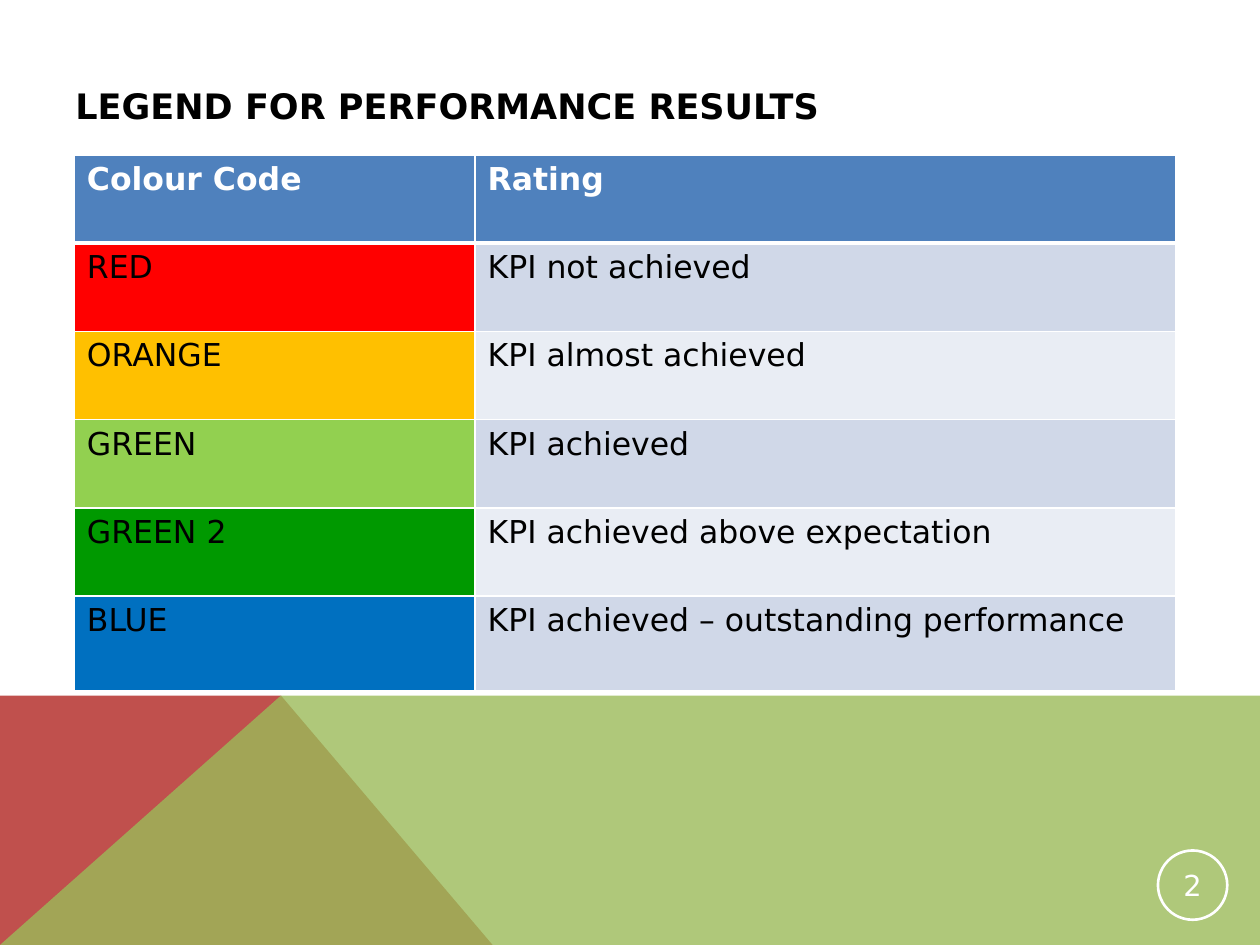
from dataclasses import dataclass

from lxml import etree
from pptx import Presentation
from pptx.dml.color import RGBColor
from pptx.enum.shapes import MSO_SHAPE
from pptx.enum.text import MSO_ANCHOR, PP_ALIGN
from pptx.oxml.ns import qn
from pptx.util import Inches, Pt

OVAL = MSO_SHAPE.OVAL
MIDDLE = MSO_ANCHOR.MIDDLE
CENTER = PP_ALIGN.CENTER


@dataclass(frozen=True)
class Theme:
    font: str = "DejaVu Sans"
    title_size: float = 20
    table_size: float = 18
    number_size: float = 16.5
    text: str = "000000"
    light: str = "FFFFFF"
    header: str = "4F81BD"
    bands: tuple = ("D0D8E8", "E9EDF4")
    red_panel: str = "C0504D"
    green_panel: str = "9BBB59"


THEME = Theme()
BLANK_LAYOUT = 6

HEADINGS = ("Colour Code", "Rating")
RATINGS = (
    ("RED", "FF0000", "KPI not achieved"),
    ("ORANGE", "FFC000", "KPI almost achieved"),
    ("GREEN", "92D050", "KPI achieved"),
    ("GREEN 2", "009900", "KPI achieved above expectation"),
    ("BLUE", "0070C0", "KPI achieved – outstanding performance"),
)


def style_text(frame, size, color, bold=False):
    for para in frame.paragraphs:
        for span in para.runs:
            span.font.name = THEME.font
            span.font.size = Pt(size)
            span.font.bold = bold
            span.font.color.rgb = RGBColor.from_string(color)


def add_panel(page, points, color, opacity=100):
    corners = [(Inches(x), Inches(y)) for x, y in points]
    builder = page.shapes.build_freeform(*corners[0])
    builder.add_line_segments(corners[1:], close=True)
    panel = builder.convert_to_shape()
    panel.shadow.inherit = False
    panel.fill.solid()
    panel.fill.fore_color.rgb = RGBColor.from_string(color)
    panel.line.fill.background()
    if opacity < 100:
        fill_color = panel.fill._xPr.find(".//" + qn("a:srgbClr"))
        etree.SubElement(fill_color, qn("a:alpha"), val=str(opacity * 1000))


def add_footer_art(page, left, top, width, height):
    """Red wedge with a translucent green panel sloping over it."""
    right, bottom = left + width, top + height
    peak = (left + 2.23, top)
    add_panel(page, [(left, bottom), (left, top), peak, (left + 3.91, bottom)],
              THEME.red_panel)
    add_panel(page, [(left, bottom), peak, (right, top), (right, bottom)],
              THEME.green_panel, opacity=80)


def add_title(page, left, top, width, height):
    box = page.shapes.add_textbox(Inches(left), Inches(top), Inches(width), Inches(height))
    frame = box.text_frame
    frame.word_wrap = True
    frame.vertical_anchor = MIDDLE
    frame.text = "LEGEND FOR PERFORMANCE RESULTS"
    style_text(frame, THEME.title_size, THEME.text, bold=True)


def add_page_number(page, left, top, size):
    badge = page.shapes.add_shape(OVAL, Inches(left), Inches(top), Inches(size), Inches(size))
    badge.shadow.inherit = False
    badge.fill.background()
    badge.line.color.rgb = RGBColor.from_string(THEME.light)
    badge.line.width = Pt(1.5)
    frame = badge.text_frame
    frame.margin_left = frame.margin_right = Inches(0.01)
    frame.margin_top = frame.margin_bottom = Inches(0.01)
    frame.vertical_anchor = MIDDLE
    frame.text = "2"
    frame.paragraphs[0].alignment = CENTER
    style_text(frame, THEME.number_size, THEME.light)


def set_borders(cell, **widths):
    """Draw white borders; widths in points, keyed by side."""
    properties = cell._tc.get_or_add_tcPr()
    for index, side in enumerate("LRTB"):
        width = Pt(widths.get(side, 1))
        line = etree.Element(qn("a:ln" + side), w=str(width))
        fill = etree.SubElement(line, qn("a:solidFill"))
        etree.SubElement(fill, qn("a:srgbClr"), val=THEME.light)
        properties.insert(index, line)


def fill_cell(cell, text, fill, color, bold=False, **borders):
    cell.text = text
    style_text(cell.text_frame, THEME.table_size, color, bold)
    cell.fill.solid()
    cell.fill.fore_color.rgb = RGBColor.from_string(fill)
    set_borders(cell, **borders)


def add_legend(page, left, top, width, height):
    row_height, first_column = 0.7, 3.18
    row_count = len(RATINGS) + 1
    table = page.shapes.add_table(row_count, len(HEADINGS), Inches(left), Inches(top),
                                  Inches(width), Inches(height)).table
    table.columns[0].width = Inches(first_column)
    table.columns[1].width = Inches(width - first_column)
    for row in table.rows:
        row.height = Inches(row_height)
    # The last row takes the remaining height
    table.rows[row_count - 1].height = Inches(height - row_height * (row_count - 1))

    for column, heading in enumerate(HEADINGS):
        fill_cell(table.cell(0, column), heading, THEME.header, THEME.light, bold=True, B=3)
    for index, (name, code, rating) in enumerate(RATINGS):
        # The first rating row shares the thick rule under the header
        rule = 3 if index == 0 else 1
        band = THEME.bands[index % len(THEME.bands)]
        fill_cell(table.cell(index + 1, 0), name, code, THEME.text, T=rule)
        fill_cell(table.cell(index + 1, 1), rating, band, THEME.text, T=rule)


def main():
    deck = Presentation()
    deck.slide_width, deck.slide_height = Inches(10), Inches(7.5)
    page = deck.slides.add_slide(deck.slide_layouts[BLANK_LAYOUT])
    add_footer_art(page, 0, 5.52, 10, 1.98)
    add_title(page, 0.5, 0.44, 8.42, 0.79)
    add_page_number(page, 9.19, 6.75, 0.55)
    add_legend(page, 0.59, 1.23, 8.74, 4.25)
    deck.save("out.pptx")


if __name__ == "__main__":
    main()
